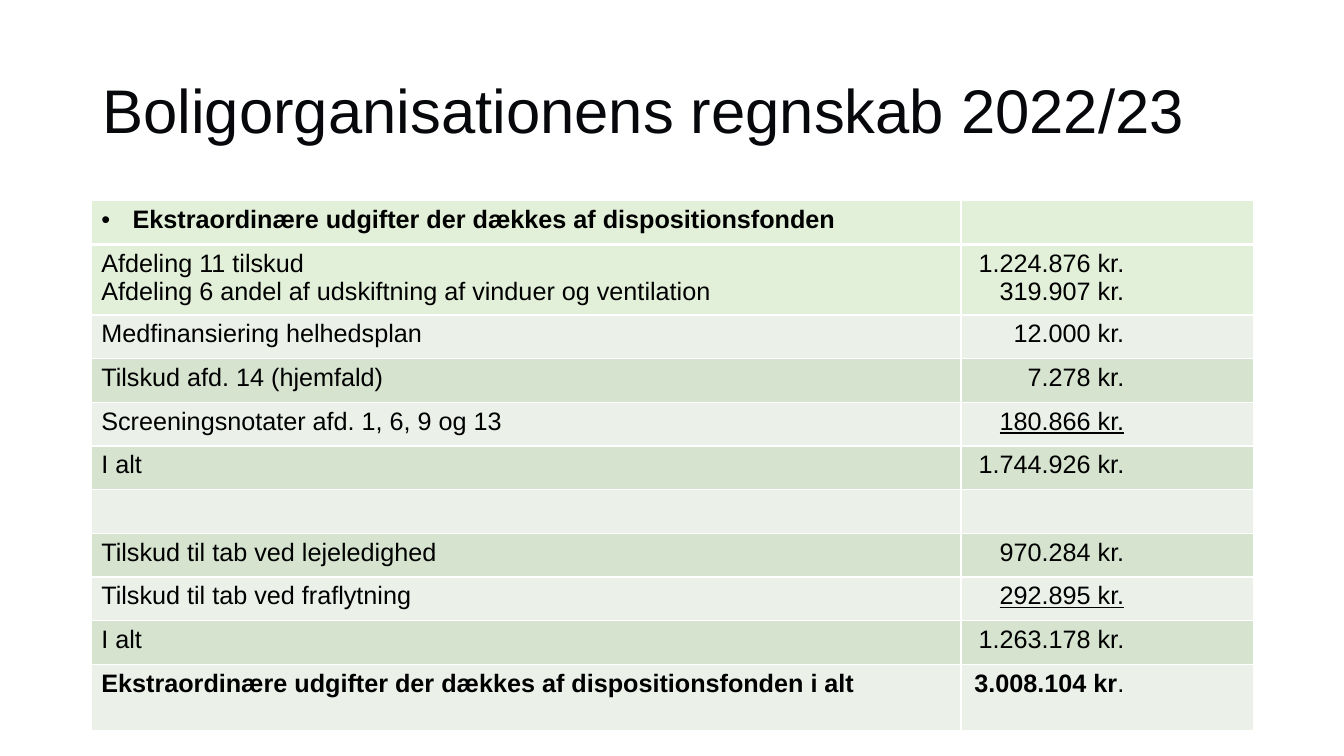
from lxml import etree
from pptx import Presentation
from pptx import util as u
from pptx.dml.color import RGBColor
from pptx.enum import text
from pptx.oxml import ns

Cm, Pt = u.Cm, u.Pt

FONT = "Arial"
HEADING_GREEN, DARK_BAND, LIGHT_BAND = "E2F0D9", "D5E3CF", "EBF1E9"
ROW_HEIGHT, TALL_ROW_HEIGHT = 1.1, 1.66
AMOUNT_TAB = 3.86

HEADING = "Ekstraordinære udgifter der dækkes af dispositionsfonden"
# Lines of the description, amounts
ENTRIES = [
    ([HEADING], []),
    (["Afdeling 11 tilskud",
      "Afdeling 6 andel af udskiftning af vinduer og ventilation"],
     ["1.224.876 kr.", "319.907 kr."]),
    (["Medfinansiering helhedsplan"], ["12.000 kr."]),
    (["Tilskud afd. 14 (hjemfald)"], ["7.278 kr."]),
    (["Screeningsnotater afd. 1, 6, 9 og 13"], ["180.866 kr."]),
    (["I alt"], ["1.744.926 kr."]),
    ([], []),
    (["Tilskud til tab ved lejeledighed"], ["970.284 kr."]),
    (["Tilskud til tab ved fraflytning"], ["292.895 kr."]),
    (["I alt"], ["1.263.178 kr."]),
    ([HEADING + " i alt"], ["3.008.104 kr"]),
]
LAST = len(ENTRIES) - 1
BOLD_ROWS = (0, LAST)
TALL_ROWS = (1, LAST)
ROWS_BEFORE_SUM = (4, 8)


def color(hex_code):
    return RGBColor.from_string(hex_code)


def style(paragraph, size, hex_code, bold=False, underline=False):
    font = paragraph.font
    font.name, font.size, font.bold = FONT, Pt(size), bold
    font.underline = underline
    font.color.rgb = color(hex_code)


def add_bullet(paragraph, indent):
    props = paragraph._p.get_or_add_pPr()
    props.set("marL", str(Cm(indent)))
    props.set("indent", str(-Cm(indent)))
    etree.SubElement(props, ns.qn("a:buFont"), typeface=FONT)
    etree.SubElement(props, ns.qn("a:buChar"), char="•")


def add_right_tab(paragraph, position):
    tabs = etree.SubElement(paragraph._p.get_or_add_pPr(), ns.qn("a:tabLst"))
    etree.SubElement(tabs, ns.qn("a:tab"), pos=str(Cm(position)), algn="r")


def set_borders(cell, widths):
    """Draw white borders; widths in points for left, right, top, bottom."""
    props = cell._tc.get_or_add_tcPr()
    for place, (side, width) in enumerate(zip("LRTB", widths)):
        line = etree.Element(ns.qn(f"a:ln{side}"), w=str(Pt(width)))
        fill = etree.SubElement(line, ns.qn("a:solidFill"))
        etree.SubElement(fill, ns.qn("a:srgbClr"), val="FFFFFF")
        props.insert(place, line)


def band_color(row):
    if row < 2:
        return HEADING_GREEN
    return DARK_BAND if row % 2 else LIGHT_BAND


def paragraphs_for(cell, lines):
    """Yield one paragraph of the cell for each line."""
    frame = cell.text_frame
    for number, line in enumerate(lines):
        yield (frame.add_paragraph() if number else frame.paragraphs[0]), line


def fill_description(cell, row, lines):
    for paragraph, line in paragraphs_for(cell, lines):
        paragraph.add_run().text = line
        if row == 0:
            add_bullet(paragraph, 0.79)
        style(paragraph, 18, "000000", bold=row in BOLD_ROWS)


def fill_amounts(cell, row, amounts):
    for paragraph, amount in paragraphs_for(cell, amounts):
        paragraph.add_run().text = "\t" + amount
        add_right_tab(paragraph, AMOUNT_TAB)
        style(paragraph, 18, "000000", bold=row in BOLD_ROWS,
              underline=row in ROWS_BEFORE_SUM)
        if row == LAST:
            period = paragraph.add_run()
            period.text = "."
            period.font.bold = False


def add_title(slide, left, top, width, height):
    frame = slide.shapes.add_textbox(
        Cm(left), Cm(top), Cm(width), Cm(height)).text_frame
    frame.word_wrap = True
    frame.vertical_anchor = text.MSO_ANCHOR.MIDDLE
    title = frame.paragraphs[0]
    title.add_run().text = "Boligorganisationens regnskab 2022/23"
    title.line_spacing = 0.9
    style(title, 44, "07080B")


def add_accounts(slide, left, top, description_width, amount_width):
    heights = [TALL_ROW_HEIGHT if row in TALL_ROWS else ROW_HEIGHT
               for row in range(len(ENTRIES))]
    accounts = slide.shapes.add_table(
        len(ENTRIES), 2, Cm(left), Cm(top),
        Cm(description_width + amount_width), Cm(sum(heights))).table
    accounts.first_row = accounts.horz_banding = False
    accounts.columns[0].width = Cm(description_width)
    accounts.columns[1].width = Cm(amount_width)
    for row, (lines, amounts) in enumerate(ENTRIES):
        accounts.rows[row].height = Cm(heights[row])
        description, amount = accounts.cell(row, 0), accounts.cell(row, 1)
        for cell in (description, amount):
            cell.fill.solid()
            cell.fill.fore_color.rgb = color(band_color(row))
            set_borders(cell, (1, 1, 3 if row == 1 else 1, 1 if row else 3))
        fill_description(description, row, lines)
        fill_amounts(amount, row, amounts)


def main():
    deck = Presentation()
    deck.slide_width, deck.slide_height = Cm(33.87), Cm(19.05)
    slide = deck.slides.add_slide(deck.slide_layouts[6])
    add_title(slide, 2.33, 1.01, 29.21, 3.68)
    add_accounts(slide, 2.3, 5.06, 21.92, 7.37)
    deck.save("out.pptx")


if __name__ == "__main__":
    main()
